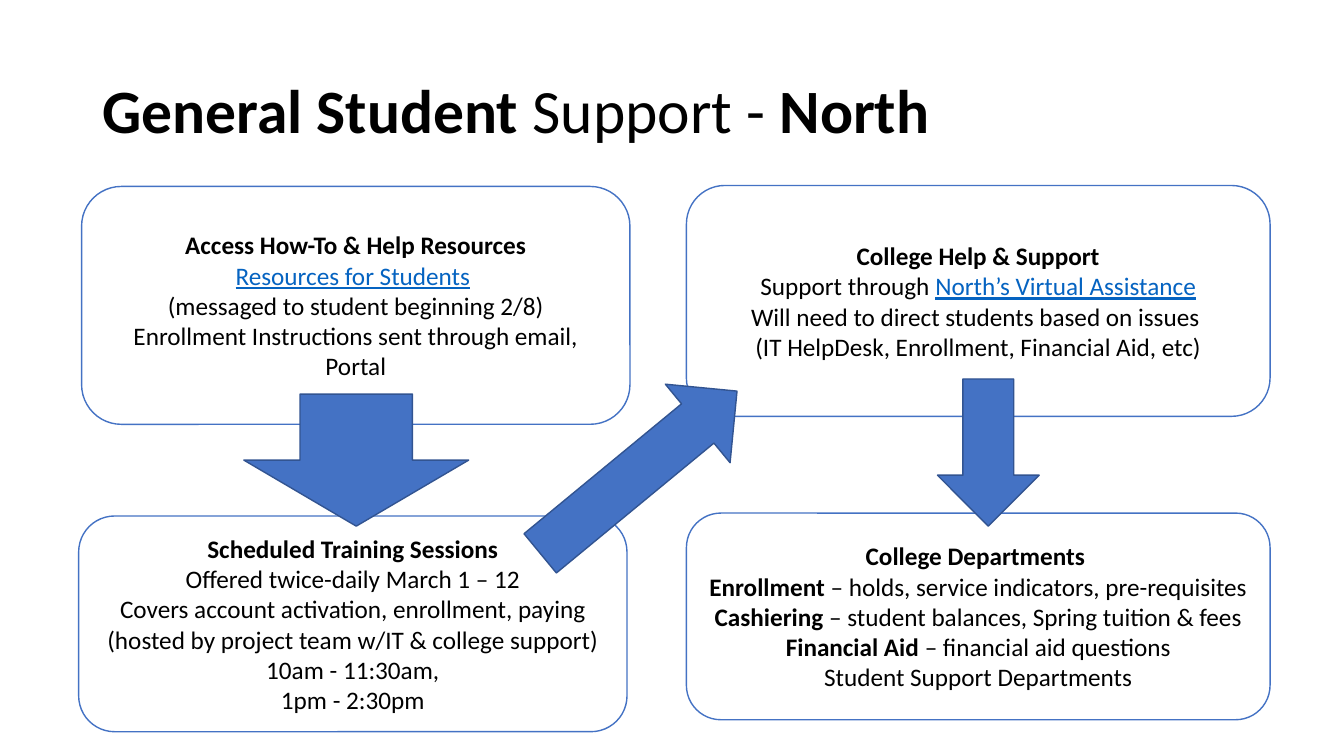
from dataclasses import dataclass

from pptx import Presentation
from pptx import util as u
from pptx.dml import color
from pptx.enum import shapes, text

FONT = "Calibri"
BLACK, WHITE, LINK = "000000", "FFFFFF", "0563C1"
BLUE, DARK_BLUE = "4472C4", "325491"


@dataclass(frozen=True)
class Run:
    words: str
    bold: bool = False
    link: bool = False


@dataclass(frozen=True)
class Frame:
    left: float
    top: float
    width: float
    height: float

    def lengths(self) -> list:
        return [u.Pt(v) for v in (self.left, self.top, self.width, self.height)]


@dataclass(frozen=True)
class Box:
    frame: Frame
    heading: str
    lines: tuple[tuple[Run, ...], ...]


@dataclass(frozen=True)
class Arrow:
    frame: Frame
    rotation: float = 0


TITLE_FRAME = Frame(66.2, 28.8, 828, 104.4)
TITLE = (Run("General Student", bold=True), Run(" Support - "), Run("North", bold=True))

BOXES = (
    Box(Frame(58.3, 133.2, 391.7, 169.9), "Access How-To & Help Resources", (
        (Run("Resources for Students", link=True), Run(" ")),
        (Run("(messaged to student beginning 2/8)"),),
        (Run("Enrollment Instructions sent through email, Portal"),),
    )),
    Box(Frame(490.3, 132.5, 416.9, 164.9), "College Help & Support", (
        (Run("Support through "), Run("North’s Virtual Assistance", link=True)),
        (Run("Will need to direct students based on issues "),),
        (Run("(IT HelpDesk, Enrollment, Financial Aid, etc)"),),
    )),
    Box(Frame(490.3, 366.5, 416.9, 147.6), "College Departments ", (
        (Run("Enrollment", bold=True), Run(" – holds, service indicators, pre-requisites")),
        (Run("Cashiering", bold=True), Run(" – student balances, Spring tuition & fees")),
        (Run("Financial Aid ", bold=True), Run("– financial aid questions")),
        (Run("Student Support Departments"),),
    )),
    Box(Frame(56.2, 368.6, 391.7, 154.1), "Scheduled Training Sessions", (
        (Run("Offered twice-daily March 1 – 12"),),
        (Run("Covers account activation, enrollment, paying"),),
        (Run("(hosted by project team w/IT & college support)"),),
        (Run("10am - 11:30am,"),),
        (Run("1pm - 2:30pm"),),
    )),
)

ARROWS = (
    Arrow(Frame(669.6, 270.7, 72.7, 105.1)),
    Arrow(Frame(174.2, 281.5, 160.6, 94.3)),
    Arrow(Frame(419.8, 246.2, 72.7, 182.2), rotation=230.5),
)


def rgb(value: str) -> color.RGBColor:
    return color.RGBColor.from_string(value)


def write_line(p, runs: tuple[Run, ...], size: float, align) -> None:
    p.alignment = align
    p.font.name = FONT
    p.font.size = u.Pt(size)
    p.font.color.rgb = rgb(BLACK)
    for run in runs:
        r = p.add_run()
        r.text = run.words
        r.font.bold = run.bold
        if run.link:
            r.font.underline = True
            r.font.color.rgb = rgb(LINK)


def add_title(s) -> None:
    tf = s.shapes.add_textbox(*TITLE_FRAME.lengths()).text_frame
    tf.word_wrap = True
    tf.vertical_anchor = text.MSO_ANCHOR.MIDDLE
    p = tf.paragraphs[0]
    p.line_spacing = 0.9
    write_line(p, TITLE, 44, text.PP_ALIGN.LEFT)


def add_preset(s, kind, frame: Frame, fill: str, line: str):
    sp = s.shapes.add_shape(kind, *frame.lengths())
    sp.shadow.inherit = False
    sp.fill.solid()
    sp.fill.fore_color.rgb = rgb(fill)
    sp.line.color.rgb = rgb(line)
    sp.line.width = u.Pt(1)
    return sp


def add_box(s, box: Box) -> None:
    sp = add_preset(s, shapes.MSO_SHAPE.ROUNDED_RECTANGLE, box.frame, WHITE, BLUE)
    tf = sp.text_frame
    tf.word_wrap = True
    tf.vertical_anchor = text.MSO_ANCHOR.MIDDLE
    lines = ((Run(box.heading, bold=True),), *box.lines)
    for i, runs in enumerate(lines):
        p = tf.add_paragraph() if i else tf.paragraphs[0]
        write_line(p, runs, 18, text.PP_ALIGN.CENTER)


def add_arrow(s, arrow: Arrow) -> None:
    sp = add_preset(s, shapes.MSO_SHAPE.DOWN_ARROW, arrow.frame, BLUE, DARK_BLUE)
    sp.rotation = arrow.rotation


def main() -> None:
    prs = Presentation()
    prs.slide_width, prs.slide_height = u.Pt(960), u.Pt(540)
    s = prs.slides.add_slide(prs.slide_layouts[6])
    add_title(s)
    for box in BOXES:
        add_box(s, box)
    for arrow in ARROWS:
        add_arrow(s, arrow)
    prs.save("out.pptx")


if __name__ == "__main__":
    main()
